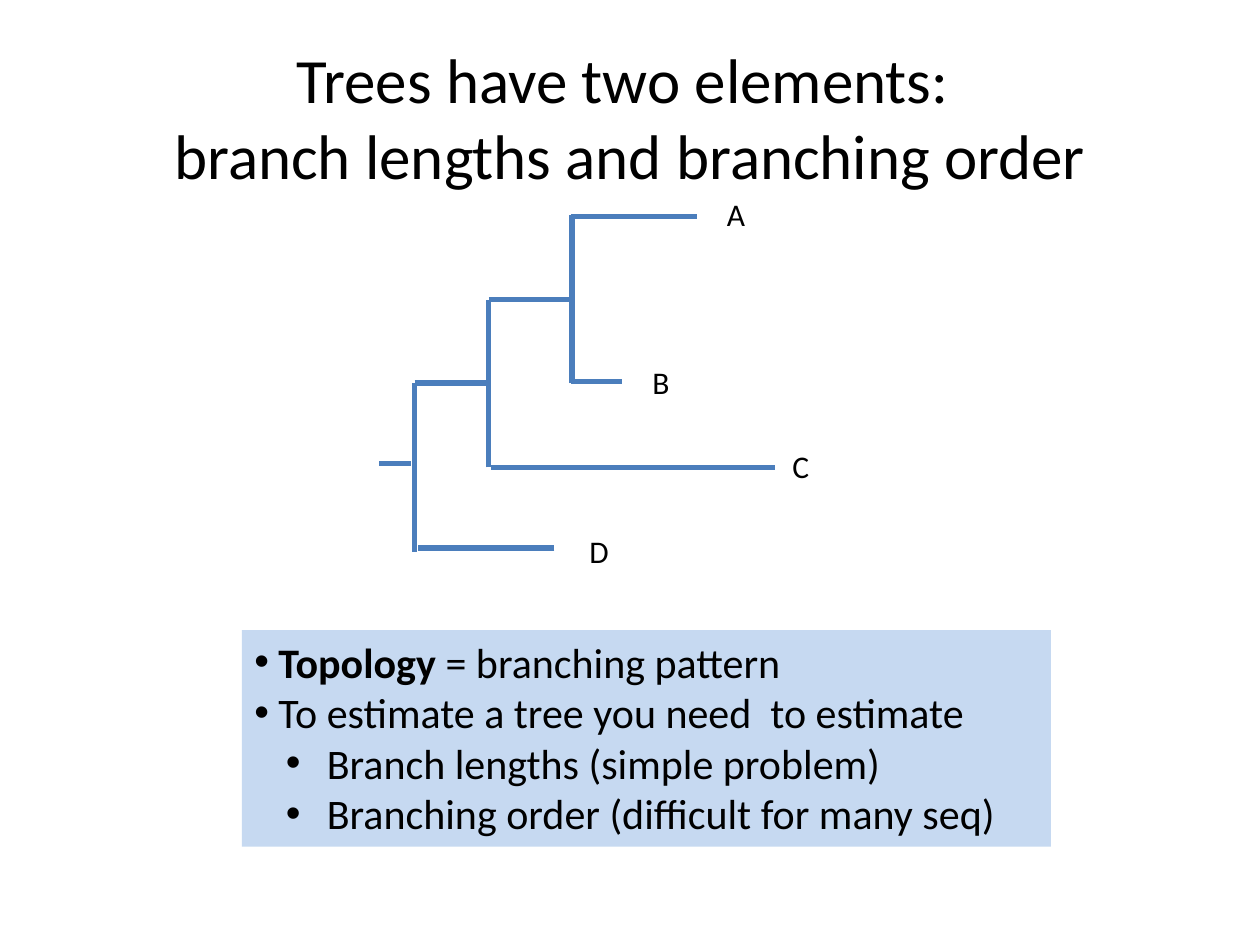
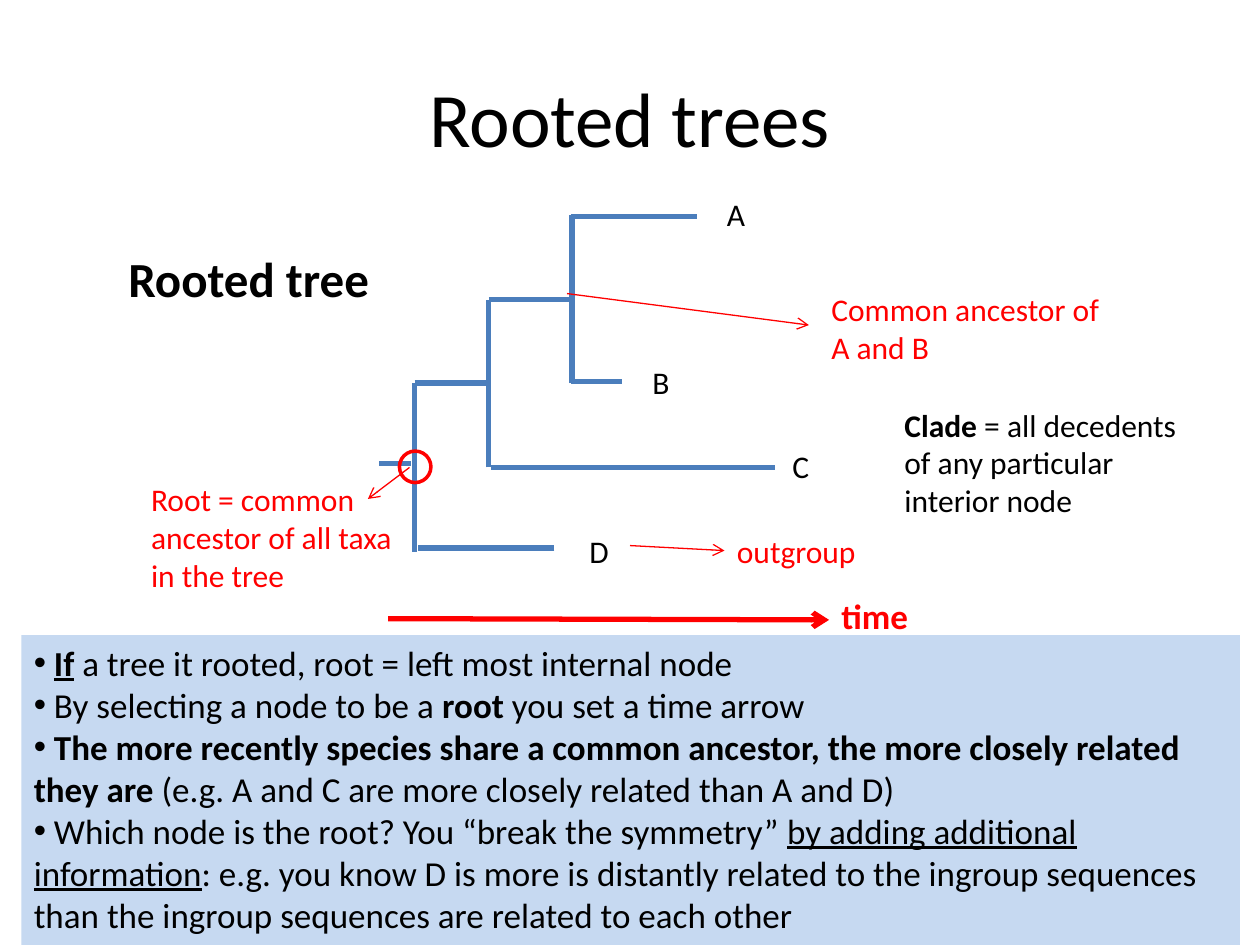
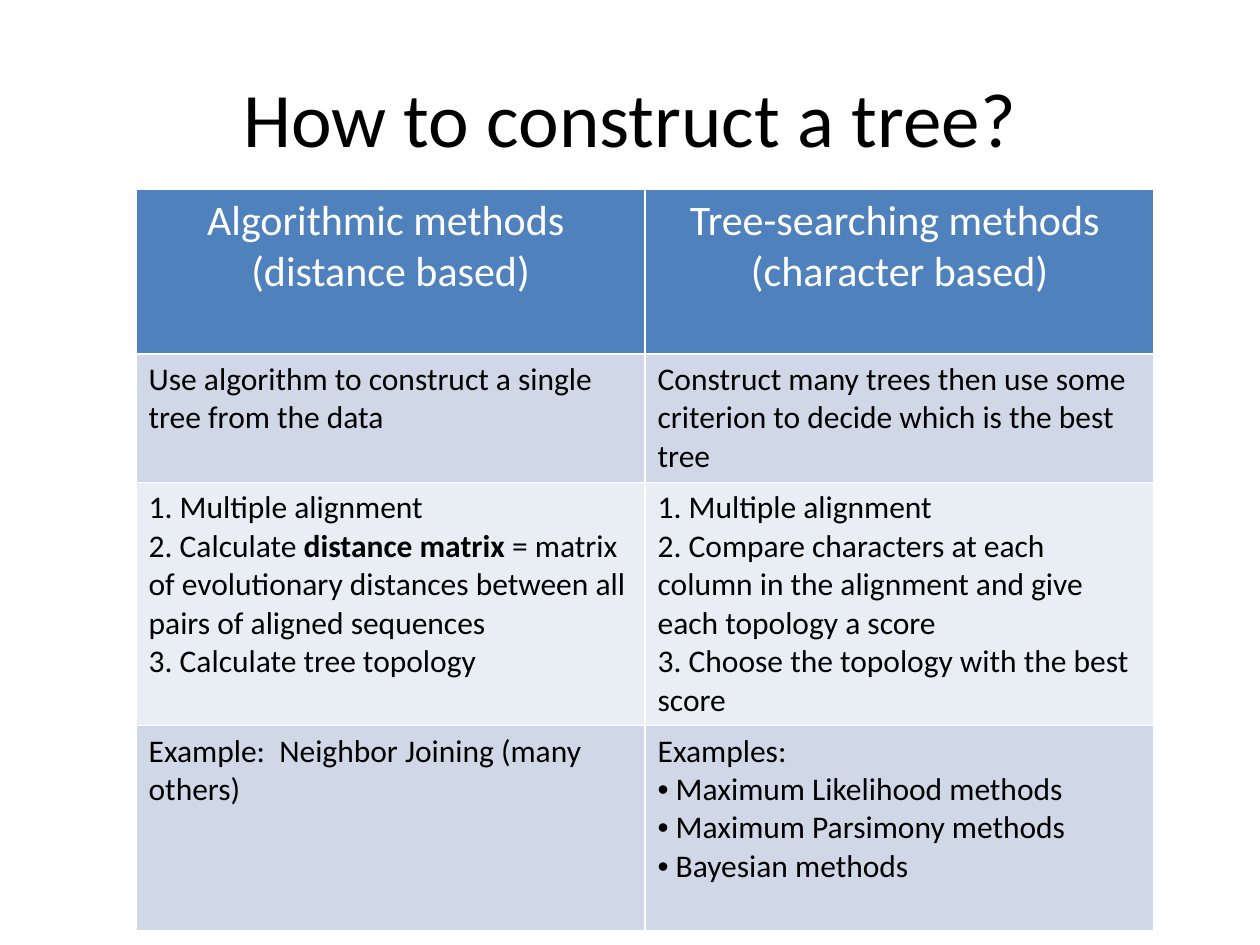
from lxml import etree
from pptx import Presentation
from pptx.dml.color import RGBColor
from pptx.enum import shapes as kinds, text as txt
from pptx.oxml.ns import qn
from pptx.util import Inches, Pt

FONT = "Calibri"
BLACK, WHITE, RED = "000000", "FFFFFF", "FF0000"
BRANCH, PANEL, HEAD = "4B7EBC", "C6D9F1", "4F81BD"
BANDS = ["D0D8E8", "E9EDF4"]

# A paragraph is a list of runs; a run is (words, marks), marks from "b" and "u".
# Branches: x1, y1, x2, y2
BRANCHES = [
    (4.4, 4.35, 3.32, 4.35), (3.29, 4.38, 3.29, 3.04),
    (3.29, 3.04, 3.88, 3.04), (3.9, 3.71, 6.15, 3.71),
    (3.88, 3.71, 3.88, 2.38), (3.88, 2.38, 4.54, 2.38),
    (4.54, 3.04, 4.54, 1.71), (4.53, 3.03, 4.94, 3.03),
    (4.53, 1.72, 5.53, 1.72),
]
STEM = (3.01, 3.68, 3.26, 3.68)
TAXA = [("A", 5.67, 1.5), ("B", 5.08, 2.83), ("C", 6.19, 3.5), ("D", 4.58, 4.17)]

ORDER = [
    [(" Topology", "b"), (" = branching pattern", "")],
    [(" To estimate a tree you need  to estimate", "")],
    [(" Branch lengths (simple problem)", "")],
    [(" Branching order (difficult for many seq)", "")],
]
ROOTED = [
    [(" ", ""), ("If", "bu"), (" a tree it rooted, root = left most internal node", "")],
    [(" By selecting a node to be a ", ""), ("root", "b"),
     (" you set a time arrow", "")],
    [(" ", ""), ("The more recently species share a common ancestor, "
                 "the more closely related they are ", "b"),
     ("(e.g. A and C are more closely related than A and D)", "")],
    [(" Which node is the root? You “break the symmetry” ", ""),
     ("by adding additional information", "u"),
     (": e.g. you know D is more is distantly related to the ingroup sequences "
      "than the ingroup sequences are related to each other", "")],
]
# Notes: place, runs, size, colour
NOTES = [
    ((1.1, 3.76, 2.32, 1.01),
     [("Root = common ancestor of all taxa in the tree", "")], 18, RED),
    ((0.92, 1.92, 2.5, 0.57), [("Rooted tree", "b")], 28, BLACK),
    ((6.58, 4.67, 1.17, 0.44), [("time", "b")], 20, RED),
    ((6.5, 2.25, 2.33, 0.71), [("Common ancestor of A and B", "")], 18, RED),
    ((5.75, 4.17, 1.69, 0.4), [("outgroup", "")], 18, RED),
    ((7.08, 3.17, 2.5, 1.01),
     [("Clade", "b"), (" = all decedents of any particular interior node", "")],
     18, BLACK),
]
# Arrows: ends, width
ARROWS = [
    ((3.25, 3.71, 2.92, 3.96), 0.75), ((3.08, 4.91, 6.58, 4.92), 3),
    ((4.5, 2.33, 6.42, 2.58), 0.75), ((5, 4.33, 5.75, 4.37), 0.75),
]

METHODS = [
    [[[("Algorithmic methods ", "")], [("(distance based)", "")]],
     [[("Tree-searching methods ", "")], [("(character based)", "")]]],
    [[[("Use algorithm to construct a single tree from the data", "")]],
     [[("Construct many trees then use some criterion to decide "
        "which is the best tree", "")]]],
    [[[("1. Multiple alignment", "")],
      [("2. Calculate ", ""), ("distance matrix ", "b"),
       ("= matrix of evolutionary distances between all pairs "
        "of aligned sequences", "")],
      [("3. Calculate tree topology", "")]],
     [[("1. Multiple alignment", "")],
      [("2. Compare characters at each column in the alignment "
        "and give each topology a score", "")],
      [("3. Choose the topology with the best score", "")]]],
    [[[("Example:  Neighbor Joining (many others)", "")]],
     [[("Examples:", "")], [(" Maximum Likelihood methods", "")],
      [(" Maximum Parsimony methods", "")], [(" Bayesian methods", "")]]],
]
ROWS = [1.31, 1.02, 1.93, 1.63]


def rgb(code):
    return RGBColor.from_string(code)


def inch(nums):
    return [Inches(n) for n in nums]


def write(frame, paras, size, color=BLACK, align=txt.PP_ALIGN.LEFT):
    """Fill a frame run by run; a run of one newline is a line break."""
    frame.word_wrap = True
    for i, runs in enumerate(paras):
        para = frame.paragraphs[0] if i == 0 else frame.add_paragraph()
        para.alignment = align
        for words, marks in runs:
            if words == "\n":
                para.add_line_break()
                continue
            run = para.add_run()
            run.text = words
            font = run.font
            font.name, font.size = FONT, Pt(size)
            font.bold, font.underline = "b" in marks, "u" in marks
            font.color.rgb = rgb(color)


def bullet(para, left=0, hang=0):
    props = para._p.get_or_add_pPr()
    props.set("marL", str(Inches(left)))
    props.set("indent", str(-Inches(hang)))
    etree.SubElement(props, qn("a:buFont")).set("typeface", "Arial")
    etree.SubElement(props, qn("a:buChar")).set("char", "•")


def label(slide, place, paras, size, color=BLACK, align=txt.PP_ALIGN.LEFT):
    frame = slide.shapes.add_textbox(*inch(place)).text_frame
    write(frame, paras, size, color, align)
    return frame


def title(slide, runs, size):
    frame = label(slide, (0, 0.3, 10, 1.25), [runs], size, align=txt.PP_ALIGN.CENTER)
    frame.vertical_anchor = txt.MSO_ANCHOR.MIDDLE


def line(home, ends, color, width, arrow=False):
    link = home.add_connector(kinds.MSO_CONNECTOR.STRAIGHT, *inch(ends))
    link.line.color.rgb, link.line.width = rgb(color), Pt(width)
    props = link._element.spPr
    if arrow:
        etree.SubElement(props.get_or_add_ln(), qn("a:tailEnd")).set("type", "arrow")
    etree.SubElement(props, qn("a:effectLst"))


def tree(slide):
    group = slide.shapes.add_group_shape()
    for ends in BRANCHES:
        line(group.shapes, ends, BRANCH, 3)
    line(slide.shapes, STEM, BRANCH, 3)
    for name, x, y in TAXA:
        label(slide, (x, y, 1.17, 0.4), [[(name, "")]], 18)


def panel(slide, place, paras, size, top):
    """Draw a bulleted panel; paragraphs after the first `top` are indented."""
    box = slide.shapes.add_shape(kinds.MSO_SHAPE.RECTANGLE, *inch(place))
    box.shadow.inherit = False
    box.fill.solid()
    box.fill.fore_color.rgb = rgb(PANEL)
    box.line.fill.background()
    frame = box.text_frame
    frame.vertical_anchor = txt.MSO_ANCHOR.TOP
    write(frame, paras, size)
    for i, para in enumerate(frame.paragraphs):
        bullet(para, *((0, 0) if i < top else (0.5, 0.25)))


def elements(slide):
    title(slide, [("Trees have two elements: ", ""), ("\n", ""),
                  ("branch lengths and branching order", "")], 36)
    tree(slide)
    panel(slide, (1.92, 5, 6.42, 1.72), ORDER, 24, top=2)


def rooted(slide):
    title(slide, [("Rooted trees", "")], 44)
    tree(slide)
    panel(slide, (0.17, 5.04, 9.67, 2.46), ROOTED, 20, top=len(ROOTED))
    for place, runs, size, color in NOTES:
        label(slide, place, [runs], size, color)
    for ends, width in ARROWS:
        line(slide.shapes, ends, RED, width, arrow=True)
    ring = slide.shapes.add_shape(kinds.MSO_SHAPE.OVAL, *inch((3.17, 3.58, 0.25, 0.25)))
    ring.shadow.inherit = False
    ring.fill.background()
    ring.line.color.rgb, ring.line.width = rgb(RED), Pt(2)


def methods(slide):
    title(slide, [("How to construct a tree?", "")], 44)
    place = inch((1.08, 1.5, 8.08, sum(ROWS)))
    grid = slide.shapes.add_table(len(METHODS), 2, *place).table
    for r, (row, tall) in enumerate(zip(METHODS, ROWS)):
        grid.rows[r].height = Inches(tall)
        for c, paras in enumerate(row):
            cell = grid.cell(r, c)
            cell.fill.solid()
            cell.fill.fore_color.rgb = rgb(BANDS[(r - 1) % 2] if r else HEAD)
            if r:
                write(cell.text_frame, paras, 18)
            else:
                write(cell.text_frame, paras, 24, WHITE, txt.PP_ALIGN.CENTER)
    for para in grid.cell(3, 1).text_frame.paragraphs[1:]:
        bullet(para)


def main():
    deck = Presentation()
    deck.slide_width, deck.slide_height = inch((10, 7.5))
    for build in (elements, rooted, methods):
        build(deck.slides.add_slide(deck.slide_layouts[6]))
    deck.save("out.pptx")


if __name__ == "__main__":
    main()
